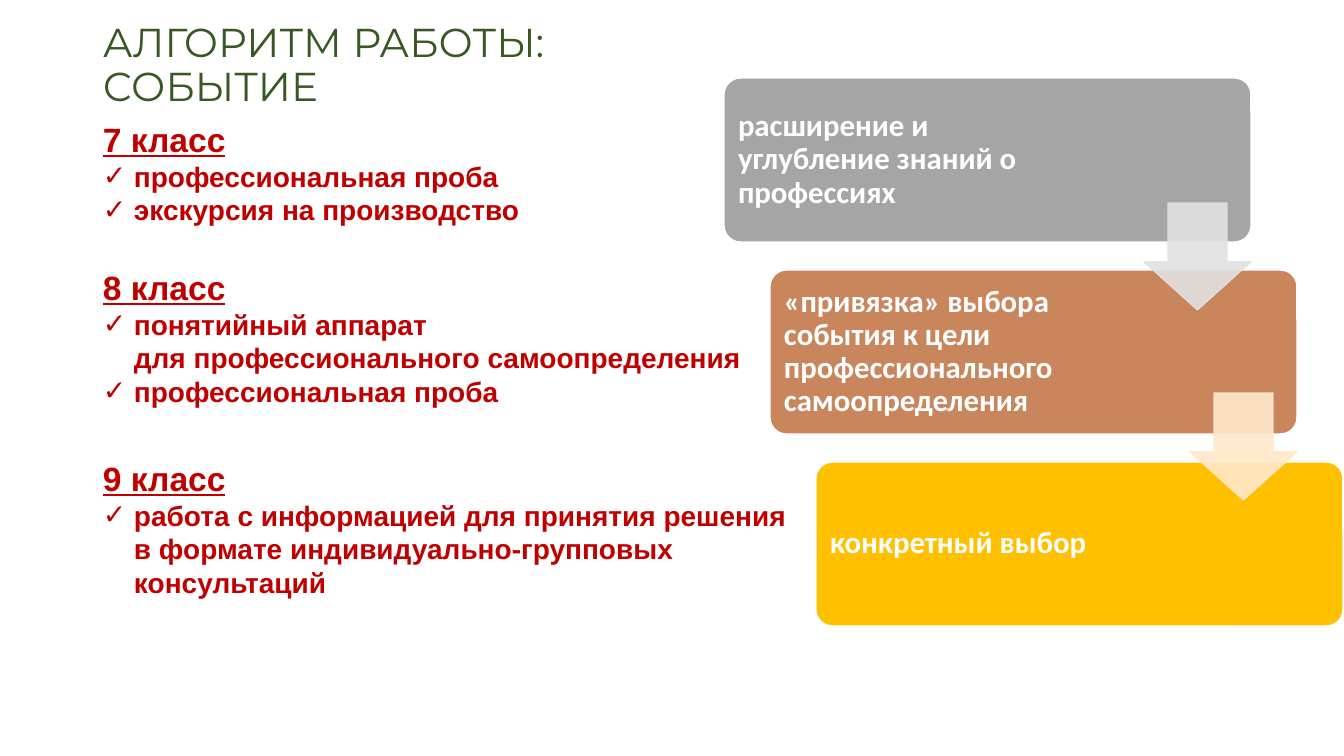
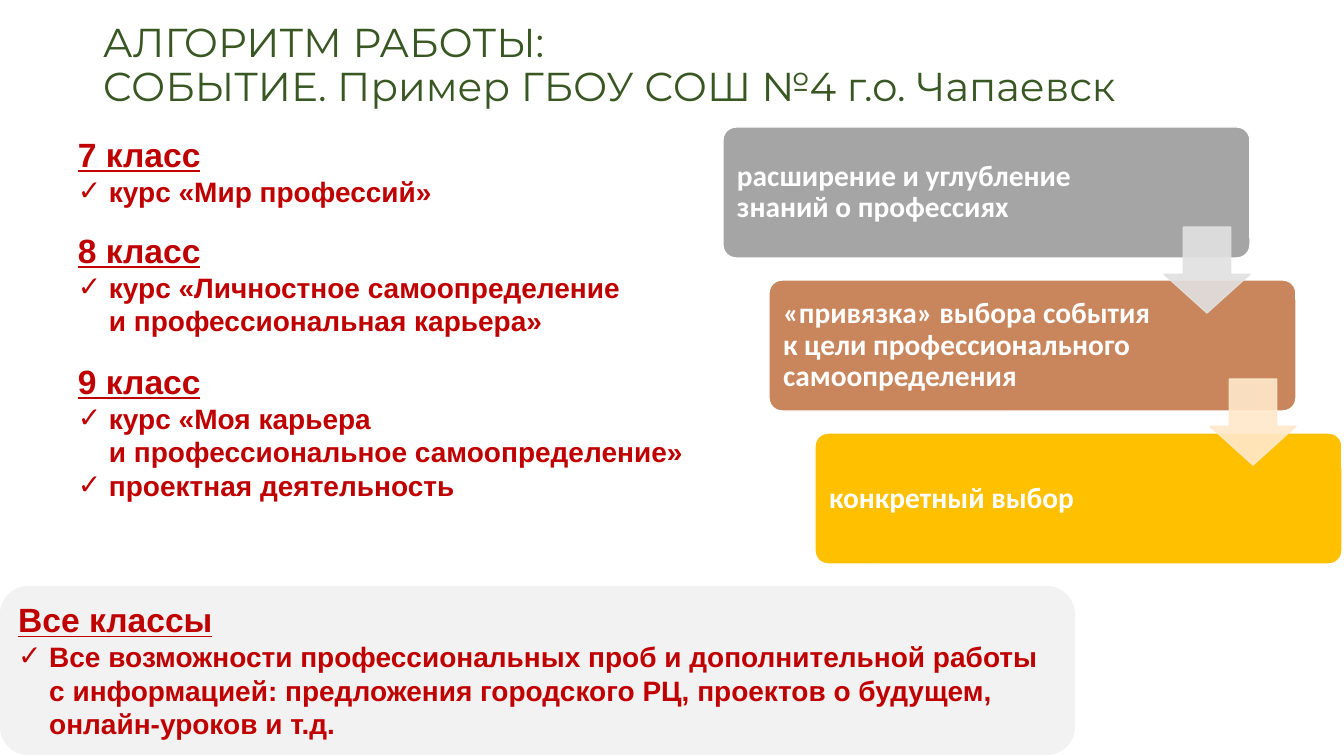
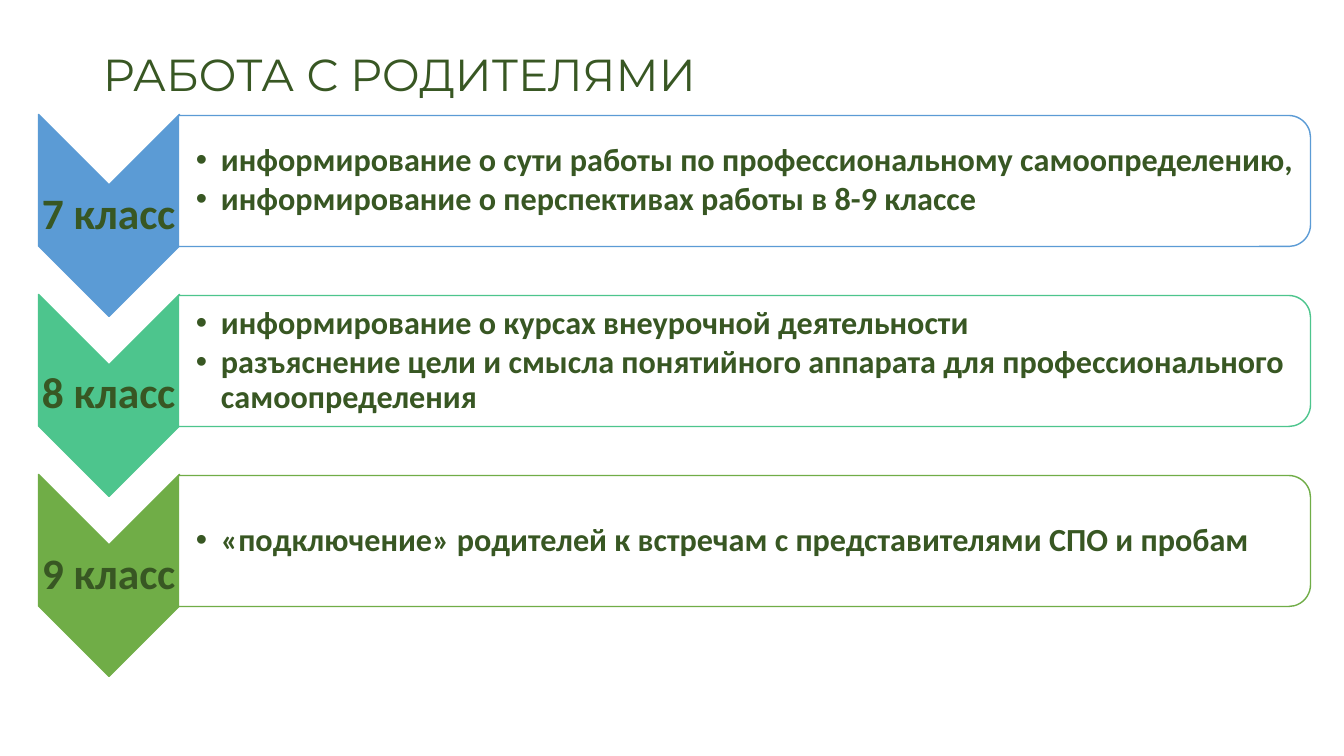
"""Build three slides on career guidance work with grades 7 to 9."""
from dataclasses import dataclass

from lxml import etree
from pptx import Presentation
from pptx.dml.color import RGBColor
from pptx.enum.shapes import MSO_SHAPE
from pptx.enum.text import MSO_ANCHOR, PP_ALIGN
from pptx.oxml.ns import qn
from pptx.util import Pt

ROUND = MSO_SHAPE.ROUNDED_RECTANGLE
ARROW = MSO_SHAPE.DOWN_ARROW
CHEVRON = MSO_SHAPE.CHEVRON
PANEL = MSO_SHAPE.ROUND_2_SAME_RECTANGLE
TOP, MIDDLE = MSO_ANCHOR.TOP, MSO_ANCHOR.MIDDLE
LEFT, CENTER = PP_ALIGN.LEFT, PP_ALIGN.CENTER
PX = 12192000 / 1344


@dataclass(frozen=True)
class Theme:
    green: str = "385723"
    red: str = "C00000"
    white: str = "FFFFFF"
    pale: str = "F2F2F2"
    cards: tuple = ("A5A5A5", "C9855C", "FFC000")
    arrows: tuple = ("E1E1E1", "FFE8CB")
    grades: tuple = ("5B9BD5", "4DC58D", "70AD47")
    title_font: str = "Montserrat"
    list_font: str = "Arial"
    card_font: str = "Calibri"
    head_size: int = 24
    item_size: int = 20
    grade_size: int = 31
    panel_size: int = 23


T = Theme()


def add_box(s, kind, box, fill=None, line=None, alpha=100, adj=(), rotation=0):
    box = [round(v * PX) for v in box]
    if kind is None:
        return s.shapes.add_textbox(*box)
    sp = s.shapes.add_shape(kind, *box)
    sp.shadow.inherit = False
    sp.rotation = rotation
    for i, value in enumerate(adj):
        sp.adjustments[i] = value
    sp.fill.solid()
    sp.fill.fore_color.rgb = RGBColor.from_string(fill)
    if line:
        sp.line.color.rgb = RGBColor.from_string(line)
        sp.line.width = Pt(1)
    else:
        sp.line.fill.background()
    if alpha < 100:
        for clr in sp._element.spPr.iter(qn("a:srgbClr")):
            etree.SubElement(clr, qn("a:alpha"), val=str(alpha * 1000))
    return sp


def add_text(sp, paras, font, color, bold=True, anchor=TOP, align=LEFT,
             spacing=1.0, gap=0, insets=(10, 5, 10, 5), indent=31):
    tf = sp.text_frame
    tf.word_wrap = True
    tf.vertical_anchor = anchor
    tf.margin_left, tf.margin_top, tf.margin_right, tf.margin_bottom = [
        round(v * PX) for v in insets]
    for i, (text, size, bullet, underline) in enumerate(paras):
        p = tf.paragraphs[0] if i == 0 else tf.add_paragraph()
        if bullet:
            pPr = p._p.get_or_add_pPr()
            pPr.set("marL", str(round(indent * PX)))
            pPr.set("indent", str(-round(indent * PX)))
            etree.SubElement(pPr, qn("a:buFont"), typeface="Arial")
            etree.SubElement(pPr, qn("a:buChar"), char=bullet)
        p.alignment = align
        p.line_spacing = spacing
        if i:
            p.space_before = Pt(gap)
        for n, part in enumerate(text.split("\n")):
            if n:
                p.add_line_break()
            r = p.add_run()
            r.text = part
            r.font.name = font
            r.font.size = Pt(size)
            r.font.bold = bold
            r.font.underline = underline
            r.font.color.rgb = RGBColor.from_string(color)


prs = Presentation()
prs.slide_width, prs.slide_height = round(1344 * PX), round(756 * PX)

titles = [
    ("АЛГОРИТМ РАБОТЫ:\nСОБЫТИЕ", 29, 28.8),
    ("АЛГОРИТМ РАБОТЫ:\nСОБЫТИЕ. Пример ГБОУ СОШ №4 г.о. Чапаевск", 29, 28.8),
    ("РАБОТА С РОДИТЕЛЯМИ", 40, 32),
]
slides = []
for title, top, size in titles:
    s = prs.slides.add_slide(prs.slide_layouts[6])
    sp = add_box(s, None, (93, top, 1159, 75))
    add_text(sp, [(title, size, None, False)], T.title_font, T.green,
             bold=False, anchor=MIDDLE, spacing=0.9)
    slides.append(s)

event_lists = [
    (slides[0], None, 93, 114, 621, "7 класс",
     ["профессиональная проба", "экскурсия на производство"]),
    (slides[0], None, 93, 262, 971, "8 класс",
     ["понятийный аппарат\nдля профессионального самоопределения",
      "профессиональная проба"]),
    (slides[0], None, 93, 453, 942, "9 класс",
     ["работа с информацией для принятия решения\n"
      "в формате индивидуально-групповых\nконсультаций"]),
    (slides[1], None, 68, 129, 621, "7 класс", ["курс «Мир профессий»"]),
    (slides[1], None, 68, 225, 971, "8 класс",
     ["курс «Личностное самоопределение\nи профессиональная карьера»"]),
    (slides[1], None, 68, 356, 942, "9 класс",
     ["курс «Моя карьера\nи профессиональное самоопределение»",
      "проектная деятельность"]),
    (slides[1], ROUND, 0, 586, 1075, "Все классы",
     ["Все возможности профессиональных проб и дополнительной работы\n"
      "с информацией: предложения городского РЦ, проектов о будущем,\n"
      "онлайн-уроков и т.д."]),
]
for s, kind, x, y, w, head, items in event_lists:
    lines = sum(item.count("\n") + 1 for item in items)
    h = 51 + 34 * lines + (16 if kind else 0)
    sp = add_box(s, kind, (x, y, w, h), T.pale)
    paras = [(head, T.head_size, None, True)]
    paras += [(item, T.item_size, "✓", False) for item in items]
    add_text(sp, paras, T.list_font, T.red)

steps = [
    "расширение и углубление знаний о профессиях",
    "«привязка» выбора события к цели профессионального самоопределения",
    "конкретный выбор",
]
staircases = [
    (slides[0], 724, 78, 164, 192, 22, (350, 364, 364), 107, 203, 190),
    (slides[1], 723, 127, 131, 153, 21, (386, 388, 388), 86, 227, 152),
]
card_w, shift = 527, 46
for s, x, y, h, step, size, widths, arrow, arrow_y, arrow_step in staircases:
    for i, text in enumerate(steps):
        left, top = x + shift * i, y + step * i
        add_box(s, ROUND, (left, top, card_w, h), T.cards[i], T.white, adj=(0.1,))
        sp = add_box(s, None, (left + 5, top + 4, widths[i], h - 8))
        add_text(sp, [(text, size, None, False)], T.card_font, T.white,
                 anchor=MIDDLE, spacing=0.9, insets=(9, 9, 9, 9))
    for i, color in enumerate(T.arrows):
        left = x + shift * i + card_w - arrow
        add_box(s, ARROW, (left, arrow_y + arrow_step * i, arrow, arrow),
                color, color, alpha=90, adj=(0.55, 0.45))

parents = [
    ("7 класс", ["информирование о сути работы по профессиональному самоопределению,",
                 "информирование о перспективах работы в 8-9 классе"]),
    ("8 класс", ["информирование о курсах внеурочной деятельности",
                 "разъяснение цели и смысла понятийного аппарата "
                 "для профессионального самоопределения"]),
    ("9 класс", ["«подключение» родителей к встречам с представителями СПО и пробам"]),
]
s = slides[2]
for i, (grade, items) in enumerate(parents):
    y, color = 180 * i, T.grades[i]
    add_box(s, CHEVRON, (8, y + 145, 202, 141), color, color, rotation=90)
    sp = add_box(s, None, (38, y + 185, 141, 60))
    add_text(sp, [(grade, T.grade_size, None, False)], T.card_font, T.green,
             anchor=MIDDLE, align=CENTER, spacing=0.9, insets=(2, 2, 2, 2))
    add_box(s, PANEL, (679, y - 385, 131, 1132), T.white, color, rotation=90)
    sp = add_box(s, None, (178, y + 122, 1125, 118))
    add_text(sp, [(item, T.panel_size, "•", False) for item in items],
             T.card_font, T.green, anchor=MIDDLE, spacing=0.9, gap=3,
             insets=(18, 2, 2, 2), indent=25)

prs.save("out.pptx")
